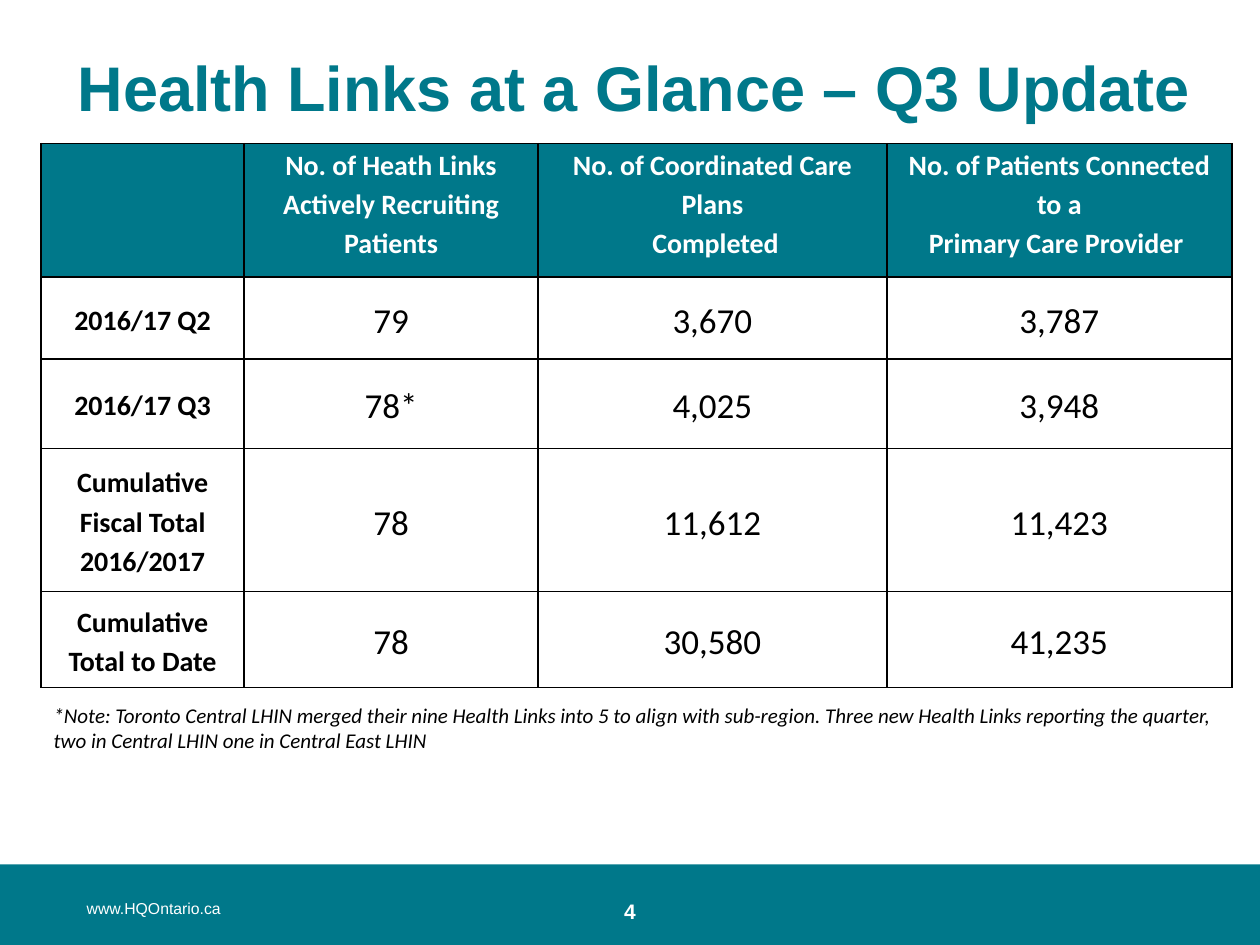
from dataclasses import dataclass

from lxml.etree import SubElement
from pptx import Presentation
from pptx.dml.color import RGBColor as Color
from pptx.enum.shapes import MSO_SHAPE as Shape
from pptx.enum.text import MSO_ANCHOR as Anchor, PP_ALIGN as Align
from pptx.oxml.ns import qn
from pptx.util import Pt


@dataclass(frozen=True)
class Theme:
    teal: str = "00788A"
    white: str = "FFFFFF"
    black: str = "000000"
    heading_font: str = "Arial"
    body_font: str = "Calibri"
    title_size: float = 36
    value_size: float = 20
    label_size: float = 16
    small_size: float = 12
    address_size: float = 9


THEME = Theme()

HEADINGS = [
    "",
    "No. of Heath Links\nActively Recruiting Patients",
    "No. of Coordinated Care Plans\n Completed",
    "No. of Patients Connected to a\nPrimary Care Provider ",
]
RESULTS = [
    ["2016/17 Q2", "79", "3,670", "3,787"],
    ["2016/17 Q3", "78*", "4,025", "3,948"],
    ["Cumulative Fiscal Total 2016/2017", "78", "11,612", "11,423"],
    ["Cumulative Total to Date", "78", "30,580", "41,235"],
]
COLUMN_WIDTHS = [116, 168, 199.3, 197.2]
ROW_HEIGHTS = [76.2, 46.9, 51.1, 82, 54.7]
NOTE = (
    "*Note: Toronto Central LHIN merged their nine Health Links into 5 to align "
    "with sub-region. Three new Health Links reporting the quarter, "
    "two in Central LHIN one in Central East LHIN"
)


def style_text(frame, font, size, color, bold=False, italic=False,
               align=Align.LEFT, line_spacing=None):
    for paragraph in frame.paragraphs:
        paragraph.alignment = align
        paragraph.line_spacing = line_spacing
        for run in paragraph.runs:
            run.font.name = font
            run.font.size = Pt(size)
            run.font.bold = bold
            run.font.italic = italic
            run.font.color.rgb = Color.from_string(color)


def add_text(slide, text, left, top, width, height, font, size, color,
             anchor=Anchor.TOP, **style):
    frame = slide.shapes.add_textbox(
        Pt(left), Pt(top), Pt(width), Pt(height)).text_frame
    frame.word_wrap = True
    frame.vertical_anchor = anchor
    frame.text = text
    style_text(frame, font, size, color, **style)


def add_band(slide, left, top, width, height):
    band = slide.shapes.add_shape(
        Shape.RECTANGLE, Pt(left), Pt(top), Pt(width), Pt(height))
    band.shadow.inherit = False
    band.fill.solid()
    band.fill.fore_color.rgb = Color.from_string(THEME.teal)
    band.line.fill.background()


def add_borders(cell):
    properties = cell._tc.get_or_add_tcPr()
    for position, side in enumerate(("lnL", "lnR", "lnT", "lnB")):
        border = properties.makeelement(qn(f"a:{side}"), {"w": str(Pt(1))})
        fill = SubElement(border, qn("a:solidFill"))
        SubElement(fill, qn("a:srgbClr"), val=THEME.black)
        properties.insert(position, border)


def fill_cell(cell, text, is_heading, is_label):
    cell.margin_left = cell.margin_right = Pt(5)
    cell.margin_top = cell.margin_bottom = 0
    cell.vertical_anchor = Anchor.TOP if is_heading else Anchor.MIDDLE
    if is_heading:
        cell.fill.solid()
        cell.fill.fore_color.rgb = Color.from_string(THEME.teal)
    else:
        cell.fill.background()
    add_borders(cell)

    strong = is_heading or is_label
    cell.text_frame.text = text
    style_text(cell.text_frame, THEME.body_font,
               THEME.label_size if strong else THEME.value_size,
               THEME.white if is_heading else THEME.black,
               bold=strong, align=Align.CENTER, line_spacing=1.15)


def add_results(slide, left, top):
    rows = [HEADINGS] + RESULTS
    table = slide.shapes.add_table(
        len(rows), len(HEADINGS), Pt(left), Pt(top),
        Pt(sum(COLUMN_WIDTHS)), Pt(sum(ROW_HEIGHTS))).table
    table.horz_banding = False
    for column, width in zip(table.columns, COLUMN_WIDTHS):
        column.width = Pt(width)
    for row, height in zip(table.rows, ROW_HEIGHTS):
        row.height = Pt(height)
    for r, texts in enumerate(rows):
        for c, text in enumerate(texts):
            fill_cell(table.cell(r, c), text, r == 0, c == 0)


def main():
    deck = Presentation()
    deck.slide_width, deck.slide_height = Pt(720), Pt(540)
    slide = deck.slides.add_slide(deck.slide_layouts[6])

    # Footer band and page number
    add_band(slide, 0, 494, 723, 48)
    add_text(slide, "4", 318, 510, 84, 21.6, THEME.heading_font,
             THEME.small_size, THEME.white, bold=True, align=Align.CENTER)

    # Title
    add_text(slide, "Health Links at a Glance – Q3 Update", 36, 21.6, 653, 55.4,
             THEME.heading_font, THEME.title_size, THEME.teal,
             anchor=Anchor.MIDDLE, bold=True, align=Align.CENTER)

    # Web address in the footer
    add_text(slide, "www.HQOntario.ca", 42.5, 510, 222, 19.4,
             THEME.heading_font, THEME.address_size, THEME.white)

    # Note and table of results
    add_text(slide, NOTE, 23.5, 398, 680.5, 36, THEME.body_font,
             THEME.small_size, THEME.black, italic=True)
    add_results(slide, 23.5, 82)

    deck.save("out.pptx")


if __name__ == "__main__":
    main()
